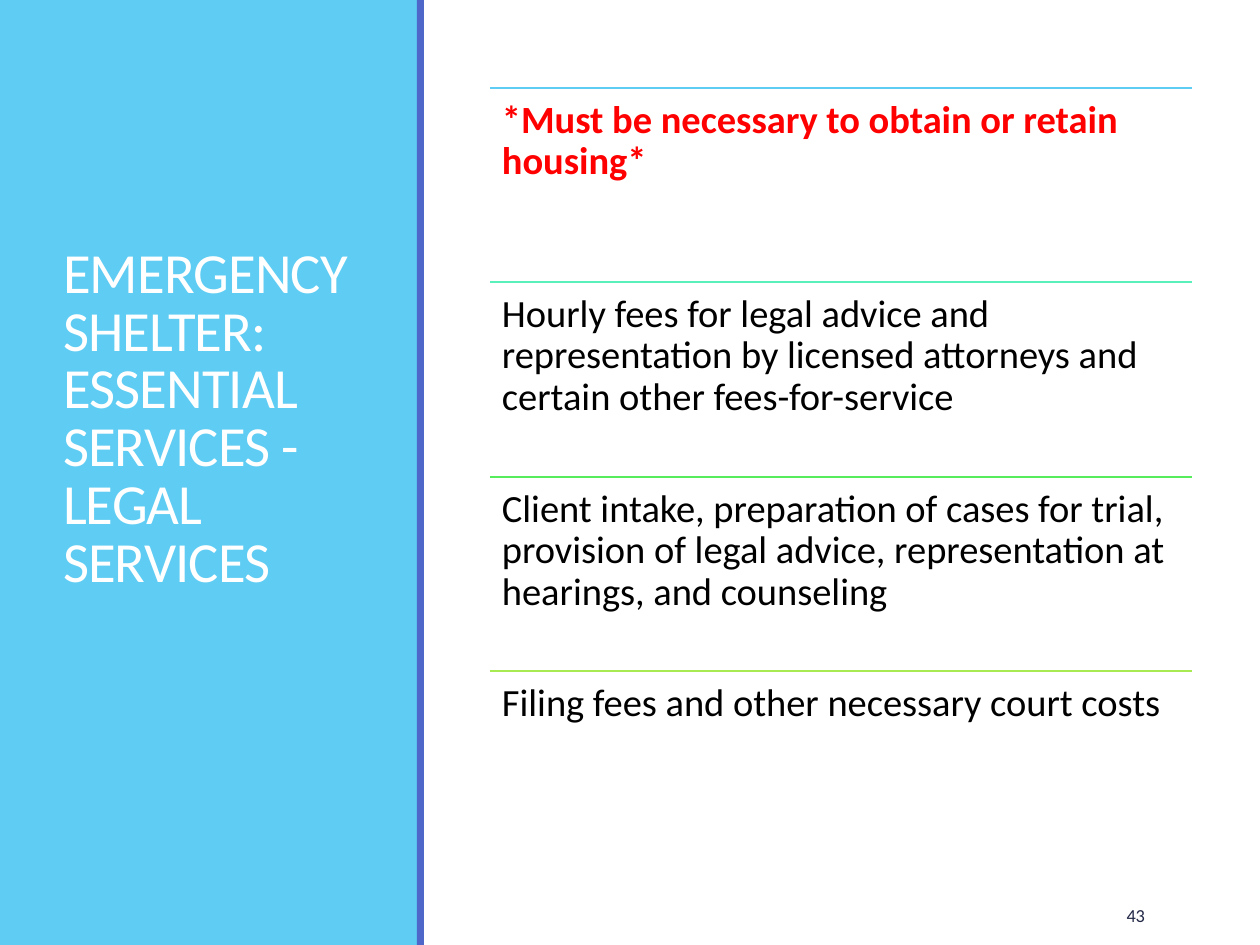
from lxml import etree
from pptx import Presentation
from pptx.dml.color import RGBColor
from pptx.enum.shapes import MSO_CONNECTOR, MSO_SHAPE
from pptx.enum.text import MSO_ANCHOR, PP_ALIGN
from pptx.oxml.ns import qn
from pptx.util import Pt

RECTANGLE = MSO_SHAPE.RECTANGLE
STRAIGHT = MSO_CONNECTOR.STRAIGHT
MIDDLE, TOP = MSO_ANCHOR.MIDDLE, MSO_ANCHOR.TOP
LEFT, RIGHT = PP_ALIGN.LEFT, PP_ALIGN.RIGHT
PX = 914400 / 126


def px(*lengths):
    return [round(length * PX) for length in lengths]


def rgb(value):
    return RGBColor.from_string(value)


prs = Presentation()
prs.slide_width, prs.slide_height = px(1260, 945)
slide = prs.slides.add_slide(prs.slide_layouts[5])

title = slide.shapes.title
panels = [(0, 418, "5ECCF3"), (417, 7, "4E67C8")]
for left, width, color in panels:
    panel = slide.shapes.add_shape(RECTANGLE, *px(left, 0, width, 945))
    panel.shadow.inherit = False
    panel.fill.solid()
    panel.fill.fore_color.rgb = rgb(color)
    panel.line.fill.background()
    title._element.addprevious(panel._element)

title.left, title.top, title.width, title.height = px(50, 72, 319, 795)
page_number = slide.shapes.add_textbox(*px(1046, 890, 112, 50))
costs = slide.shapes.add_group_shape()

texts = [
    (title, "EMERGENCY SHELTER: ESSENTIAL SERVICES - LEGAL SERVICES",
     {"size": Pt(32.4), "bold": False}, "FFFFFF", LEFT, MIDDLE, 0.85, (13, 6, 13, 104)),
    (page_number, "43", {"size": Pt(10.5)}, "212745", RIGHT, MIDDLE, 1.0, (13, 6, 13, 6)),
]

rows = [
    ("*Must be necessary to obtain or retain housing*", "5ECCF3", "FF0000", True),
    ("Hourly fees for legal advice and representation by licensed attorneys "
     "and certain other fees-for-service", "5AF0BC", "000000", False),
    ("Client intake, preparation of cases for trial, provision of legal advice, "
     "representation at hearings, and counseling", "56ED5D", "000000", False),
    ("Filing fees and other necessary court costs", "A7EA52", "000000", False),
]
rows_top, rows_height = 88, 778
for index, (wording, rule_color, text_color, bold) in enumerate(rows):
    top = rows_top + index * rows_height // len(rows)
    rule = costs.shapes.add_connector(STRAIGHT, *px(490, top, 1192, top))
    rule.line.color.rgb = rgb(rule_color)
    rule.line.width = Pt(1.25)
    etree.SubElement(rule._element.spPr, qn("a:effectLst"))
    cost = costs.shapes.add_textbox(*px(490, top, 703, 194))
    texts.append((cost, wording, {"size": Pt(22), "bold": bold}, text_color,
                  LEFT, TOP, 0.9, (12, 12, 12, 12)))

for box, wording, font_format, color, align, anchor, spacing, insets in texts:
    frame = box.text_frame
    frame.word_wrap = True
    frame.vertical_anchor = anchor
    sides = ("margin_left", "margin_top", "margin_right", "margin_bottom")
    for side, inset in zip(sides, px(*insets)):
        setattr(frame, side, inset)
    paragraph = frame.paragraphs[0]
    paragraph.alignment = align
    paragraph.line_spacing = spacing
    run = paragraph.add_run()
    run.text = wording
    run.font.color.rgb = rgb(color)
    for name, value in {"name": "Calibri", **font_format}.items():
        setattr(run.font, name, value)

title.text_frame.paragraphs[0].runs[0].font._element.set("spc", "-50")

prs.save("out.pptx")
